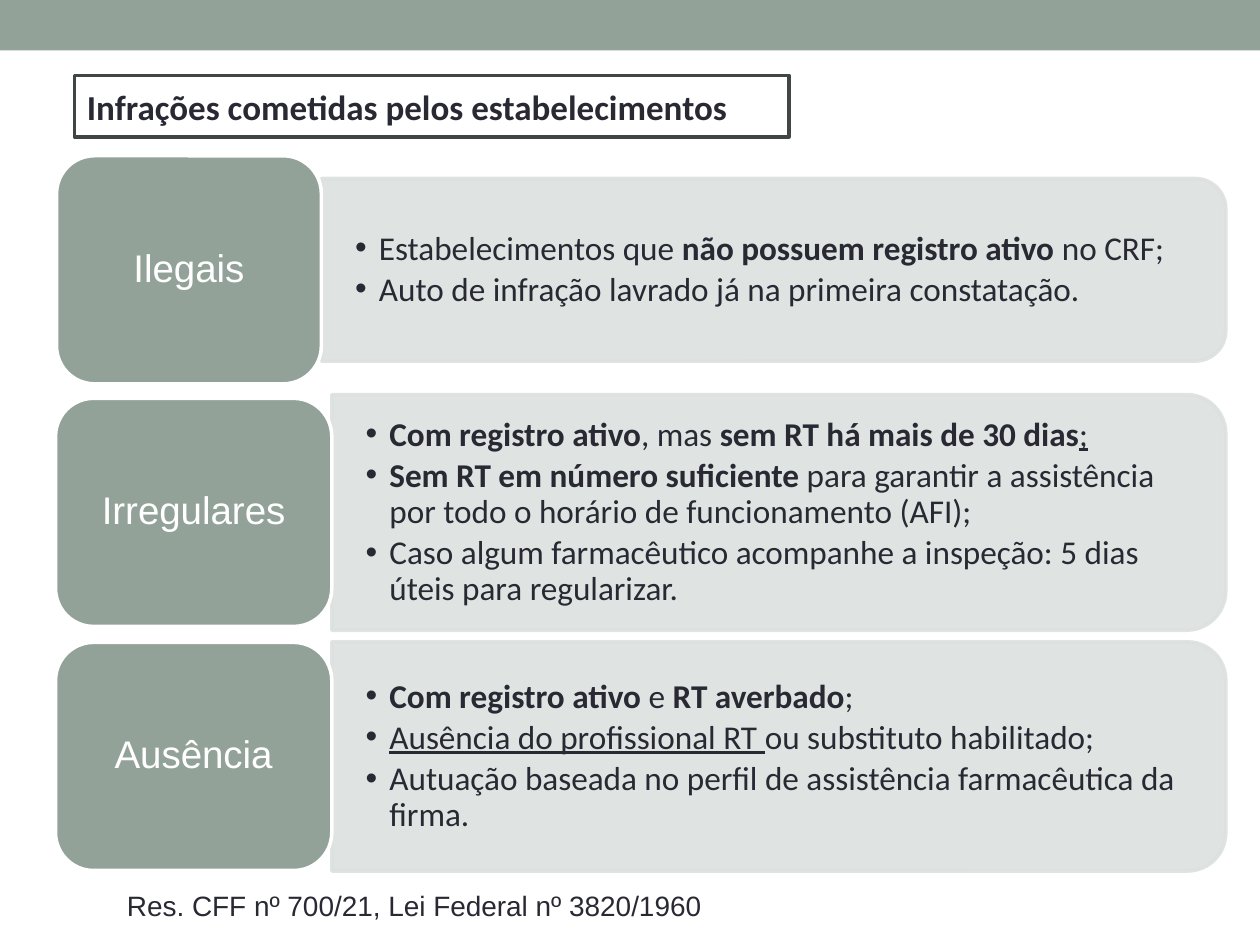
from dataclasses import dataclass

from pptx import Presentation
from pptx.dml.color import RGBColor as RGB
from pptx.enum.shapes import MSO_SHAPE as SHAPE
from pptx.enum.text import MSO_ANCHOR as ANCHOR, MSO_AUTO_SIZE as AUTO, PP_ALIGN as ALIGN
from pptx.oxml.ns import qn
from pptx.util import Cm, Pt
from lxml.etree import SubElement


@dataclass(frozen=True)
class Theme:
    sage: RGB = RGB(0x93, 0xA2, 0x99)
    panel: RGB = RGB(0xDC, 0xE0, 0xDE)
    frame: RGB = RGB(0x40, 0x47, 0x43)
    ink: RGB = RGB(0x29, 0x29, 0x34)
    white: RGB = RGB(0xFF, 0xFF, 0xFF)
    head_font: str = "Calibri"
    plain_font: str = "Arial"
    title_size: int = 20
    list_size: int = 19
    label_size: int = 22
    note_size: int = 16
    line_width: float = 2.08


def apply(obj, values):
    for name, value in values.items():
        setattr(obj, name, value)


class SlideBuilder:
    def __init__(self, slide, theme):
        self.s = slide
        self.t = theme

    def place(self, sp, left, top, width, height):
        apply(sp, {"left": Cm(left), "top": Cm(top), "width": Cm(width), "height": Cm(height)})

    def paint(self, sp, fill, line=None):
        sp.fill.solid()
        sp.fill.fore_color.rgb = fill
        if line is None:
            sp.line.fill.background()
        else:
            sp.line.color.rgb = line
            sp.line.width = Pt(self.t.line_width)

    def shape(self, kind, box, fill, line=None):
        sp = self.s.shapes.add_shape(kind, *map(Cm, box))
        sp.shadow.inherit = False
        self.paint(sp, fill, line)
        return sp

    def placeholder(self, idx, box):
        """Position a placeholder and bring it in front of the shapes drawn so far."""
        sp = self.s.placeholders[idx]
        self.place(sp, *box)
        self.s.shapes._spTree.append(sp._element)
        return sp

    def frame(self, sp, anchor, inset_x=0.25, inset_y=0.13):
        tf = sp.text_frame
        apply(tf, {
            "word_wrap": True, "auto_size": AUTO.NONE, "vertical_anchor": anchor,
            "margin_left": Cm(inset_x), "margin_right": Cm(inset_x),
            "margin_top": Cm(inset_y), "margin_bottom": Cm(inset_y),
        })
        return tf

    def add_runs(self, p, runs, font, size, color, **layout):
        """Fill a paragraph with (text, marks) runs; marks may hold b and u."""
        apply(p, {"alignment": ALIGN.LEFT, "space_before": Pt(0), "space_after": Pt(0), **layout})
        for text, marks in runs:
            r = p.add_run()
            r.text = text
            apply(r.font, {"name": font, "size": Pt(size),
                           "bold": "b" in marks, "underline": "u" in marks})
            r.font.color.rgb = color

    def bullet(self, p, char=None, indent=0.0):
        pPr = p._p.get_or_add_pPr()
        pPr.set("marL", str(Cm(indent)))
        pPr.set("indent", str(-Cm(indent)))
        if char:
            SubElement(pPr, qn("a:buChar")).set("char", char)
        else:
            SubElement(pPr, qn("a:buNone"))

    def bar(self, height):
        self.shape(SHAPE.RECTANGLE, (0, 0, 25.4, height), self.t.sage)

    def title(self, text, box):
        sp = self.placeholder(0, box)
        self.paint(sp, self.t.white, self.t.frame)
        tf = self.frame(sp, ANCHOR.MIDDLE)
        self.add_runs(tf.paragraphs[0], [(text, "b")], self.t.head_font,
                      self.t.title_size, self.t.ink)

    def panel(self, left, top, width, height):
        """Draw a translucent panel rounded on its right side only."""
        shift = (width - height) / 2
        sp = self.shape(SHAPE.ROUND_2_SAME_RECTANGLE,
                        (left + shift, top - shift, height, width), self.t.panel, self.t.panel)
        sp.rotation = 90
        for color in sp._element.spPr.iter(qn("a:srgbClr")):
            SubElement(color, qn("a:alpha")).set("val", "90000")

    def label(self, text, box):
        sp = self.shape(SHAPE.ROUNDED_RECTANGLE, box, self.t.sage, self.t.white)
        tf = self.frame(sp, ANCHOR.MIDDLE)
        self.add_runs(tf.paragraphs[0], [(text, "")], self.t.plain_font, self.t.label_size,
                      self.t.white, alignment=ALIGN.CENTER, line_spacing=0.9)

    def bullets(self, idx, items, box):
        tf = self.frame(self.placeholder(idx, box), ANCHOR.MIDDLE, 0.68, 0.34)
        for i, runs in enumerate(items):
            p = tf.add_paragraph() if i else tf.paragraphs[0]
            self.add_runs(p, runs, self.t.head_font, self.t.list_size, self.t.ink,
                          level=1, line_spacing=0.9, space_after=Pt(3))
            self.bullet(p, "•", 0.48)

    def note(self, idx, text, box):
        p = self.frame(self.placeholder(idx, box), ANCHOR.TOP).paragraphs[0]
        self.add_runs(p, [(text, "")], self.t.plain_font, self.t.note_size, self.t.ink)
        self.bullet(p)


PANEL_RIGHT = 24.71
LABEL_HEIGHT = 4.6

# placeholder, label, label left, panel left, row centre, panel height, items
ROWS = [
    (1, "Ilegais", 1.14, 6.48, 5.44, 3.68, [
        [("Estabelecimentos que ", ""), ("não possuem registro ativo ", "b"), ("no CRF;", "")],
        [("Auto de infração lavrado já na primeira constatação.", "")],
    ]),
    (2, "Irregulares", 1.12, 6.69, 10.33, 4.75, [
        [("Com registro ativo", "b"), (", mas ", ""),
         ("sem RT há mais de 30 dias", "b"), (";", "u")],
        [("Sem RT em número suficiente", "b"),
         (" para garantir a assistência por todo o horário de funcionamento (AFI);", "")],
        [("Caso algum farmacêutico acompanhe a inspeção: 5 dias úteis para regularizar.", "")],
    ]),
    (4, "Ausência", 1.12, 6.69, 15.25, 4.62, [
        [("Com registro ativo ", "b"), ("e ", ""), ("RT averbado", "b"), (";", "")],
        [("Ausência do profissional RT ", "u"), ("ou substituto habilitado;", "")],
        [("Autuação baseada no perfil de assistência farmacêutica da firma.", "")],
    ]),
]


def main():
    prs = Presentation()
    prs.slide_width, prs.slide_height = Cm(25.4), Cm(19.05)
    comparison = prs.slide_layouts[4]
    b = SlideBuilder(prs.slides.add_slide(comparison), Theme())

    b.bar(1.02)
    for idx, name, left, split, centre, height, items in ROWS:
        width, top = PANEL_RIGHT - split, centre - height / 2
        b.panel(split, top, width, height)
        b.bullets(idx, items, (split, top + 0.22, width - 0.2, height - 0.44))
        b.label(name, (left, centre - LABEL_HEIGHT / 2, split - left, LABEL_HEIGHT))
    b.note(3, "Res. CFF nº 700/21, Lei Federal nº 3820/1960", (2.31, 17.78, 12.6, 0.94))
    b.title("Infrações cometidas pelos estabelecimentos", (1.5, 1.52, 14.4, 1.24))

    prs.save("out.pptx")


if __name__ == "__main__":
    main()
